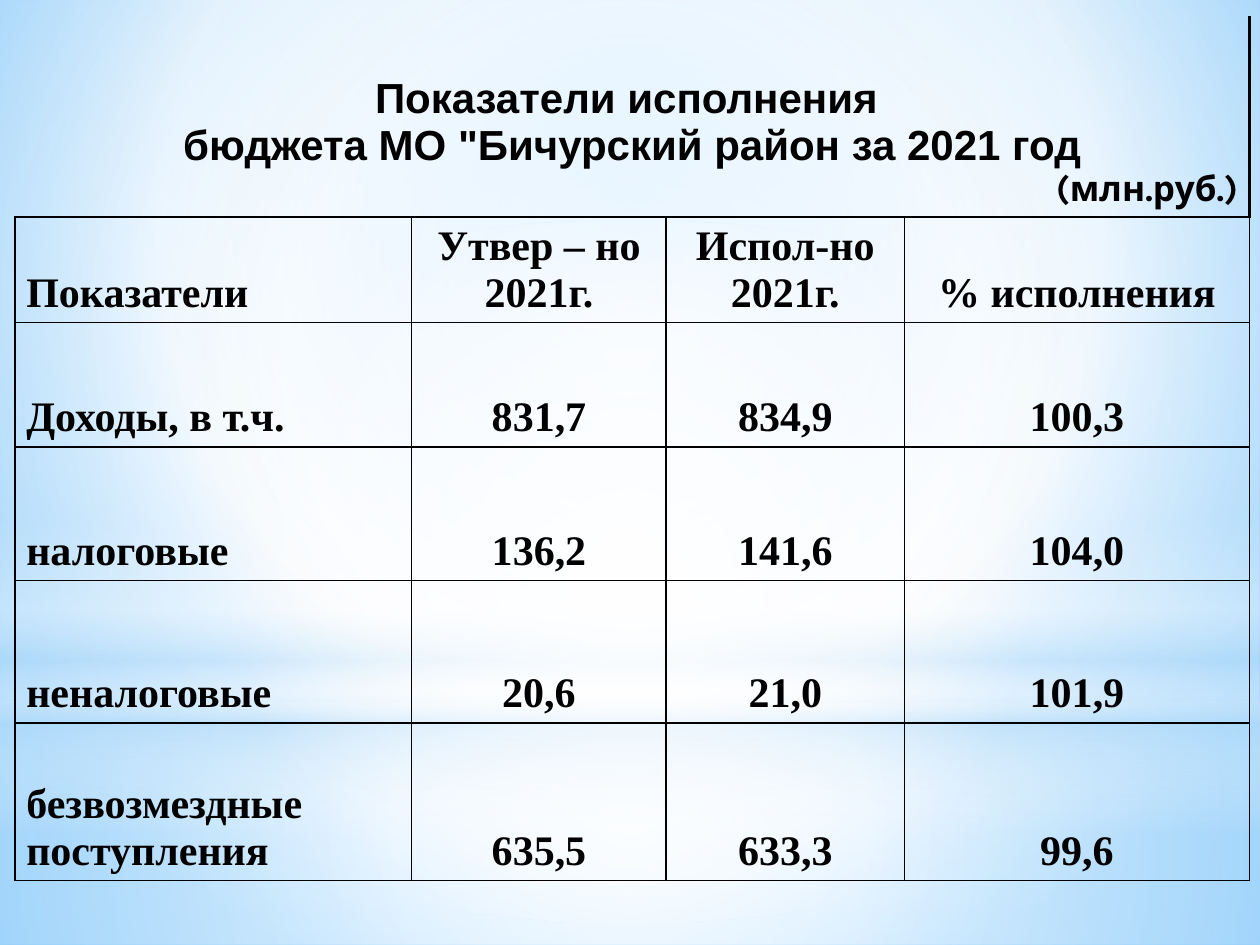
from lxml import etree
from pptx import Presentation
from pptx.dml.color import RGBColor
from pptx.enum.shapes import MSO_SHAPE
from pptx.enum.text import MSO_ANCHOR, PP_ALIGN
from pptx.oxml import parse_xml
from pptx.oxml.ns import nsdecls, qn
from pptx.util import Cm, Pt

RECTANGLE, ELLIPSE = MSO_SHAPE.RECTANGLE, MSO_SHAPE.OVAL
LEFT, CENTER, RIGHT = PP_ALIGN.LEFT, PP_ALIGN.CENTER, PP_ALIGN.RIGHT
BOTTOM = MSO_ANCHOR.BOTTOM

WIDTH, HEIGHT = 25.4, 19.05
BLACK, WHITE, PALE_BLUE = "000000", "FFFFFF", "B4DCFA"
PLAIN_TABLE_STYLE = "{2D5ABB26-0587-4C30-8999-92F81FD0307C}"
MIDDLE = '<a:path path="circle"><a:fillToRect l="50000" t="50000" r="50000" b="50000"/></a:path>'
UPPER = '<a:path path="circle"><a:fillToRect l="20000" t="10000" r="20000" b="60000"/></a:path>'
DOWNWARD = '<a:lin ang="5400000" scaled="0"/>'

BACKGROUND_STOPS = [(0, "9ED5FF", 100), (60, WHITE, 100), (100, "5BB9FF", 100)]
LAYERS = [
    (RECTANGLE, 14.17, 4.88, MIDDLE,
     [(0, WHITE, 91), (37, WHITE, 76), (100, PALE_BLUE, 79)]),
    (RECTANGLE, 0, 14.17, MIDDLE,
     [(0, WHITE, 89), (48, WHITE, 62), (100, PALE_BLUE, 79)]),
    (RECTANGLE, 10.46, 6.35, DOWNWARD,
     [(0, WHITE, 0), (29, WHITE, 30), (45, PALE_BLUE, 40),
      (55, WHITE, 26), (65, PALE_BLUE, 60), (100, WHITE, 0)]),
    (ELLIPSE, 4.45, 14.17, MIDDLE, [(0, WHITE, 100), (56, WHITE, 0)]),
]

TITLE_LINES = [
    ("Показатели исполнения ", CENTER, "Arial", 24),
    ('бюджета МО "Бичурский район за 2021 год', CENTER, "Arial", 24),
    ("(млн.руб.)", RIGHT, "Karla", 20),
]
ROWS = [
    ["Показатели", "Утвер – но 2021г.", "Испол-но 2021г.", "% исполнения"],
    ["Доходы, в т.ч.", "831,7", "834,9", "100,3"],
    ["налоговые", "136,2", "141,6", "104,0"],
    ["неналоговые", "20,6", "21,0", "101,9"],
    ["безвозмездные поступления", "635,5", "633,3", "99,6"],
]
COLUMN_WIDTHS = [8, 5.13, 4.8, 6.96]
ROW_HEIGHTS = [4.04, 1.5, 2.51, 2.69, 2.87, 3.18]


def color(value):
    """Turn a hex string into a colour."""
    return RGBColor.from_string(value)


def apply_gradient(fill, element, stops, direction):
    """Fill an element with a gradient of (position, colour, opacity) stops."""
    fill.solid()
    solid = next(element.iter(qn("a:solidFill")))
    stop_xml = "".join(
        f'<a:gs pos="{position * 1000}"><a:srgbClr val="{value}">'
        f'<a:alpha val="{opacity * 1000}"/></a:srgbClr></a:gs>'
        for position, value, opacity in stops)
    gradient = parse_xml(f'<a:gradFill {nsdecls("a")} rotWithShape="1">'
                         f'<a:gsLst>{stop_xml}</a:gsLst>{direction}</a:gradFill>')
    solid.getparent().replace(solid, gradient)


def add_layer(slide, kind, top, height, direction, stops):
    """Add a full-width, translucent backdrop shape."""
    shape = slide.shapes.add_shape(kind, 0, Cm(top), Cm(WIDTH), Cm(height))
    shape.shadow.inherit = False
    shape.line.fill.background()
    apply_gradient(shape.fill, shape._element.spPr, stops, direction)


def add_border(cell, side, points):
    """Draw a black border on one side of a cell."""
    properties = cell._tc.get_or_add_tcPr()
    line = etree.SubElement(properties, qn(f"a:ln{side}"), w=str(Pt(points)))
    solid = etree.SubElement(line, qn("a:solidFill"))
    etree.SubElement(solid, qn("a:srgbClr"), val=BLACK)


def style_cell(cell, borders):
    """Give a cell its borders, anchor and empty fill."""
    for side, points in borders.items():
        add_border(cell, side, points)
    cell.fill.background()
    cell.vertical_anchor = BOTTOM
    cell.margin_left = cell.margin_right = Cm(0.23)
    cell.margin_top = cell.margin_bottom = Cm(0.13)


def write_paragraph(paragraph, text, alignment, font_name, size):
    """Write a bold black paragraph."""
    paragraph.text = text
    paragraph.alignment = alignment
    for run in paragraph.runs:
        run.font.name = font_name
        run.font.size = Pt(size)
        run.font.bold = True
        run.font.color.rgb = color(BLACK)


def fill_title(table):
    """Merge the top row and write the title in it."""
    cell = table.cell(0, 0)
    cell.merge(table.cell(0, len(COLUMN_WIDTHS) - 1))
    style_cell(cell, {"R": 2.25, "B": 1})
    for index, line in enumerate(TITLE_LINES):
        frame = cell.text_frame
        paragraph = frame.add_paragraph() if index else frame.paragraphs[0]
        write_paragraph(paragraph, *line)


def add_budget_table(slide):
    """Add the table of budget figures."""
    frame = slide.shapes.add_table(
        len(ROW_HEIGHTS), len(COLUMN_WIDTHS), Cm(0.3), Cm(0.33),
        Cm(sum(COLUMN_WIDTHS)), Cm(sum(ROW_HEIGHTS)))
    table = frame.table
    table.horz_banding = False
    table._tbl.tblPr.find(qn("a:tableStyleId")).text = PLAIN_TABLE_STYLE
    for column, width in zip(table.columns, COLUMN_WIDTHS):
        column.width = Cm(width)
    for row, height in zip(table.rows, ROW_HEIGHTS):
        row.height = Cm(height)
    fill_title(table)
    for row_index, texts in enumerate(ROWS, start=1):
        for column_index, text in enumerate(texts):
            cell = table.cell(row_index, column_index)
            style_cell(cell, dict.fromkeys("LRTB", 1))
            alignment = CENTER if column_index else LEFT
            write_paragraph(cell.text_frame.paragraphs[0], text, alignment,
                            "Times New Roman", 24)


def main():
    """Build and save the slide."""
    presentation = Presentation()
    presentation.slide_width, presentation.slide_height = Cm(WIDTH), Cm(HEIGHT)
    slide = presentation.slides.add_slide(presentation.slide_layouts[6])
    apply_gradient(slide.background.fill, slide._element, BACKGROUND_STOPS, UPPER)
    for layer in LAYERS:
        add_layer(slide, *layer)
    add_budget_table(slide)
    presentation.save("out.pptx")


if __name__ == "__main__":
    main()
